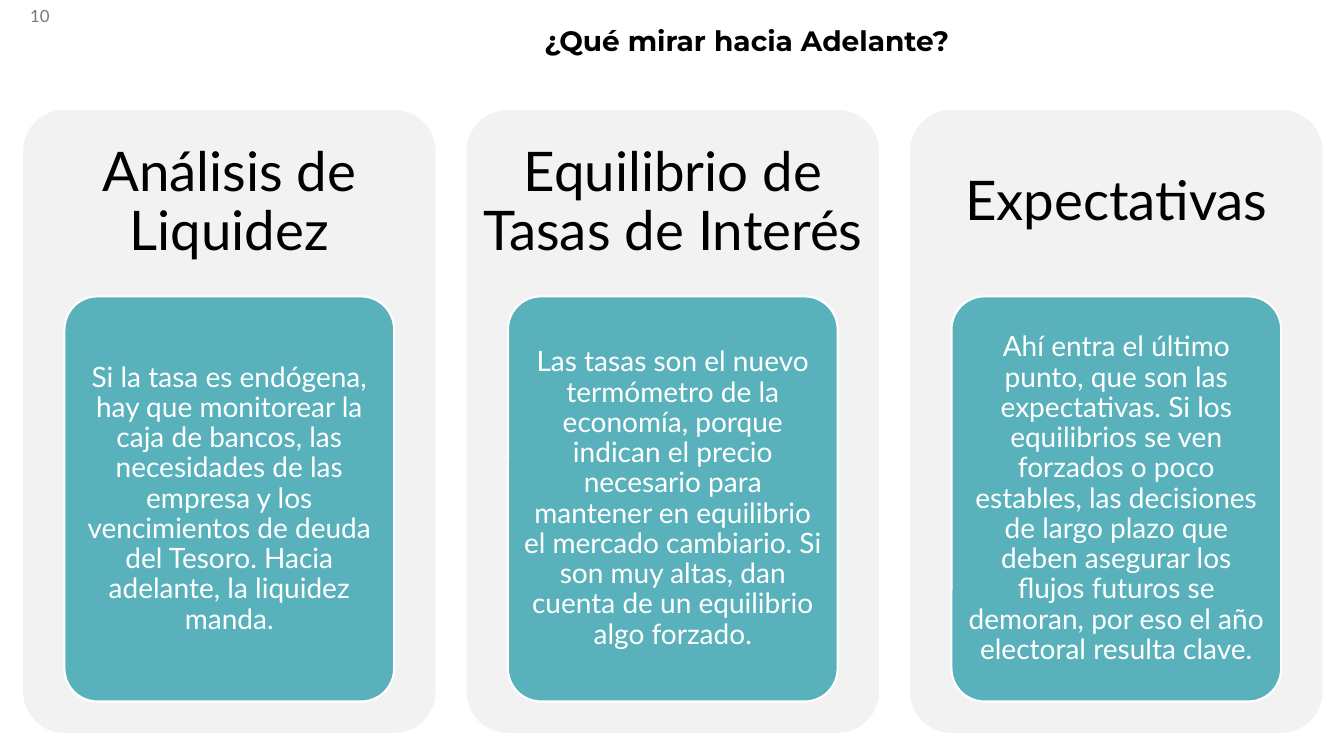
import pptx
import pptx.dml.color
import pptx.enum.shapes
import pptx.enum.text
import pptx.util

Pt = pptx.util.Pt
ALIGN = pptx.enum.text.PP_ALIGN

COLORS = {
    "black": "000000",
    "white": "FFFFFF",
    "card": "F2F2F2",
    "teal": "59B2BB",
    "number": "797979",
}

# Text formats
TITLE = {"name": "Montserrat", "size": Pt(20), "bold": True, "color": "black"}
HEADING = {"name": "Lato", "size": Pt(39), "color": "black"}
BODY = {"name": "Lato", "size": Pt(20), "color": "white"}
NUMBER = {"name": "Lato", "size": Pt(12), "color": "number"}

# Card grid
CARD_LEFT, CARD_TOP, CARD_STEP = 16.56, 78.5, 316.8
CARD_WIDTH, CARD_HEIGHT, HEADING_HEIGHT = 294.5, 445, 133.2
PANEL_INSET, PANEL_HEIGHT = 29.5, 289.4
TEXT_INSET = 7

COLUMNS = [
    ("Análisis de Liquidez",
     "Si la tasa es endógena, hay que monitorear la caja de bancos, las "
     "necesidades de las empresa y los vencimientos de deuda del Tesoro. "
     "Hacia adelante, la liquidez manda."),
    ("Equilibrio de Tasas de Interés",
     "Las tasas son el nuevo termómetro de la economía, porque indican el "
     "precio necesario para mantener en equilibrio el mercado cambiario. "
     "Si son muy altas, dan cuenta de un equilibrio algo forzado."),
    ("Expectativas",
     "Ahí entra el último punto, que son las expectativas. Si los equilibrios "
     "se ven forzados o poco estables, las decisiones de largo plazo que deben "
     "asegurar los flujos futuros se demoran, por eso el año electoral resulta "
     "clave."),
]


def rgb(name):
    return pptx.dml.color.RGBColor.from_string(COLORS[name])


def write_text(shape, text, style, margins=(7.2, 3.6), align=ALIGN.CENTER, spacing=0.9):
    frame = shape.text_frame
    horizontal, vertical = (Pt(margin) for margin in margins)
    frame_format = {
        "word_wrap": True,
        "auto_size": pptx.enum.text.MSO_AUTO_SIZE.NONE,
        "vertical_anchor": pptx.enum.text.MSO_ANCHOR.MIDDLE,
        "margin_left": horizontal,
        "margin_right": horizontal,
        "margin_top": vertical,
        "margin_bottom": vertical,
    }
    for name, value in frame_format.items():
        setattr(frame, name, value)
    paragraph = frame.paragraphs[0]
    paragraph.alignment = align
    paragraph.line_spacing = spacing
    run = paragraph.add_run()
    run.text = text
    for name, value in style.items():
        if name == "color":
            run.font.color.rgb = rgb(value)
        else:
            setattr(run.font, name, value)


def add_text(slide, box, text, style, **options):
    shape = slide.shapes.add_textbox(*map(Pt, box))
    write_text(shape, text, style, **options)


def add_panel(slide, box, fill, line=None):
    kind = pptx.enum.shapes.MSO_SHAPE.ROUNDED_RECTANGLE
    shape = slide.shapes.add_shape(kind, *map(Pt, box))
    shape.adjustments[0] = 0.1
    shape.shadow.inherit = False
    shape.fill.solid()
    shape.fill.fore_color.rgb = rgb(fill)
    if line:
        shape.line.color.rgb = rgb(line)
        shape.line.width = Pt(1.5)
    else:
        shape.line.fill.background()


def add_title(slide, box, text):
    title = slide.shapes.title
    for name, value in zip(("left", "top", "width", "height"), box):
        setattr(title, name, Pt(value))
    write_text(title, text, TITLE)


def add_column(slide, left, heading, body):
    add_panel(slide, (left, CARD_TOP, CARD_WIDTH, CARD_HEIGHT), "card")
    add_text(slide, (left, CARD_TOP, CARD_WIDTH, HEADING_HEIGHT), heading, HEADING,
             margins=(11.5, 11.5))
    panel = (left + PANEL_INSET, CARD_TOP + HEADING_HEIGHT,
             CARD_WIDTH - 2 * PANEL_INSET, PANEL_HEIGHT)
    add_panel(slide, panel, "teal", "white")
    x, y, width, height = panel
    add_text(slide, (x + TEXT_INSET, y + TEXT_INSET,
                     width - 2 * TEXT_INSET, height - 2 * TEXT_INSET),
             body, BODY, margins=(4.3, 3))


def main():
    presentation = pptx.Presentation()
    presentation.slide_width = Pt(960)
    presentation.slide_height = Pt(540)
    slide = presentation.slides.add_slide(presentation.slide_layouts[5])

    # Title
    add_title(slide, (240.5, 8.6, 586, 44), "¿Qué mirar hacia Adelante?")

    # Three columns
    for index, (heading, body) in enumerate(COLUMNS):
        add_column(slide, CARD_LEFT + index * CARD_STEP, heading, body)

    # Slide number
    add_text(slide, (0, -2.9, 42.5, 28.8), "10", NUMBER, align=ALIGN.RIGHT, spacing=1.0)

    presentation.save("out.pptx")


if __name__ == "__main__":
    main()
